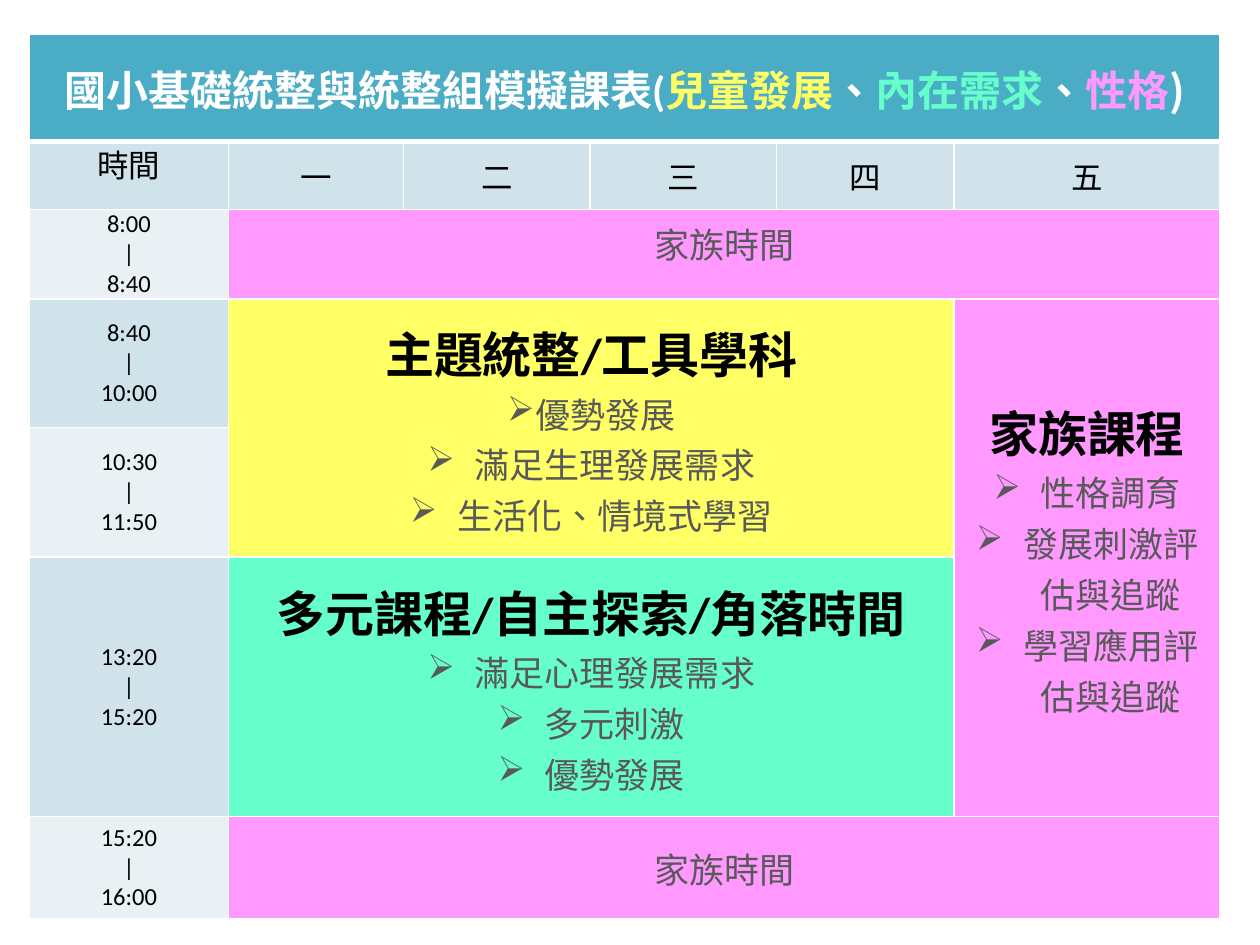
import pptx
import pptx.dml.color
import pptx.enum.text
import pptx.oxml
import pptx.oxml.ns
import pptx.util

Pt = pptx.util.Pt
RGBColor = pptx.dml.color.RGBColor
PP_ALIGN = pptx.enum.text.PP_ALIGN
MSO_ANCHOR = pptx.enum.text.MSO_ANCHOR
qn = pptx.oxml.ns.qn

WHITE = RGBColor(0xFF, 0xFF, 0xFF)
BLACK = RGBColor(0, 0, 0)
GREY = RGBColor(0x59, 0x59, 0x59)
TEAL = RGBColor(0x4B, 0xAC, 0xC6)
BAND_DARK = RGBColor(0xD0, 0xE3, 0xEA)
BAND_LIGHT = RGBColor(0xE9, 0xF1, 0xF5)
YELLOW = RGBColor(0xFF, 0xFF, 0x66)
GREEN = RGBColor(0x66, 0xFF, 0xCC)
PINK = RGBColor(0xFF, 0x99, 0xFF)

LATIN, CJK = "Calibri", "Noto Sans CJK SC"
COLS = [113.8, 100.1, 106.5, 106.5, 101.5, 152]
ROWS = [61.2, 38.9, 49.7, 73.4, 74.2, 148.3, 57.6]


def xml(tag, parent, **attrs):
    el = pptx.oxml.parse_xml(f'<a:{tag} {pptx.oxml.ns.nsdecls("a")}/>')
    for name, value in attrs.items():
        el.set(name, str(value))
    parent.append(el)
    return el


def add_run(p, text, size=18, color=BLACK, bold=False, font=LATIN):
    r = p.add_run()
    r.text = text
    r.font.size, r.font.bold, r.font.name = Pt(size), bold, font
    r.font.color.rgb = color
    rPr = r.font._element
    rPr.set("lang", "zh-TW")
    xml("ea", rPr, typeface=CJK)


class Timetable:
    def __init__(self, s):
        self.s = s

    def table(self, left, top, cols, rows):
        shape = self.s.shapes.add_table(len(rows), len(cols), Pt(left), Pt(top),
                                        Pt(sum(cols)), Pt(sum(rows)))
        self.tbl = shape.table
        for col, width in zip(self.tbl.columns, cols):
            col.width = Pt(width)
        for row, height in zip(self.tbl.rows, rows):
            row.height = Pt(height)
        # White grid, heavier below the title row
        for i in range(len(rows)):
            for j in range(len(cols)):
                tcPr = self.tbl.cell(i, j)._tc.get_or_add_tcPr()
                heavy = {0: "lnB", 1: "lnT"}.get(i)
                for side in ("lnL", "lnR", "lnT", "lnB"):
                    ln = xml(side, tcPr, w=int(Pt(3 if side == heavy else 1)))
                    xml("srgbClr", xml("solidFill", ln), val=WHITE)

    def cell(self, row, col, fill, span=(1, 1), anchor=MSO_ANCHOR.MIDDLE, inset=(5.4, 0)):
        c = self.tbl.cell(row, col)
        if span != (1, 1):
            c.merge(self.tbl.cell(row + span[0] - 1, col + span[1] - 1))
        c.fill.solid()
        c.fill.fore_color.rgb = fill
        c.vertical_anchor = anchor
        c.margin_left = c.margin_right = Pt(inset[0])
        c.margin_top = c.margin_bottom = Pt(inset[1])
        return c.text_frame

    def paragraph(self, tf, text="", bullet=False, indent=27, spacing=None, **fmt):
        p = tf.paragraphs[0]
        if p.runs:
            p = tf.add_paragraph()
        p.alignment = PP_ALIGN.CENTER
        if spacing:
            p.line_spacing = Pt(spacing)
        if bullet:
            pPr = p._p.get_or_add_pPr()
            pPr.set("marL", str(int(Pt(indent))))
            pPr.set("indent", str(int(Pt(-indent))))
            xml("buChar", pPr, char="➢")
        if text:
            add_run(p, text, **fmt)
        return p

    def time(self, row, start, end, fill, **layout):
        tf = self.cell(row, 0, fill, **layout)
        for text in (start, "|", end):
            self.paragraph(tf, text, size=14)

    def course(self, row, col, fill, span, title, goals, first_indent=27):
        tf = self.cell(row, col, fill, span)
        self.paragraph(tf, title, size=28, bold=True)
        for k, goal in enumerate(goals):
            self.paragraph(tf, goal, bullet=True, size=20, color=GREY,
                           indent=27 if k else first_indent)

    def family_time(self, row, spacing=None, **layout):
        tf = self.cell(row, 1, PINK, (1, 5), **layout)
        self.paragraph(tf, "家族時間", size=20, color=GREY, spacing=spacing)


def main():
    prs = pptx.Presentation()
    prs.slide_width, prs.slide_height = Pt(720), Pt(540)
    t = Timetable(prs.slides.add_slide(prs.slide_layouts[6]))
    t.table(16.8, 19.6, COLS, ROWS)

    # Title row
    p = t.paragraph(t.cell(0, 0, TEAL, (1, 6)))
    add_run(p, "國小基礎統整與統整組模擬課表(", size=24, color=WHITE, bold=True)
    for text, color in (("兒童發展", YELLOW), ("、", WHITE), ("內在需求", GREEN),
                        ("、", WHITE), ("性格", PINK), (")", WHITE)):
        add_run(p, text, size=24, color=color, bold=True, font=CJK)

    # Weekday row
    for col, text in enumerate(("時間", "一", "二", "三", "四", "五")):
        anchor = MSO_ANCHOR.MIDDLE if col else MSO_ANCHOR.TOP
        t.paragraph(t.cell(1, col, BAND_DARK, anchor=anchor), text)

    # Time column
    t.time(2, "8:00", "8:40", BAND_LIGHT, anchor=MSO_ANCHOR.TOP)
    t.time(3, "8:40", "10:00", BAND_DARK)
    t.time(4, "10:30", "11:50", BAND_LIGHT)
    t.time(5, "13:20", "15:20", BAND_DARK)
    t.time(6, "15:20", "16:00", BAND_LIGHT, anchor=MSO_ANCHOR.TOP, inset=(7.2, 3.6))

    # Courses
    t.family_time(2, spacing=17)
    t.course(3, 1, YELLOW, (2, 4), "主題統整/工具學科",
             ["優勢發展", "滿足生理發展需求", "生活化、情境式學習"], first_indent=0)
    t.course(3, 5, PINK, (3, 1), "家族課程",
             ["性格調育", "發展刺激評估與追蹤", "學習應用評估與追蹤"])
    t.course(5, 1, GREEN, (1, 4), "多元課程/自主探索/角落時間",
             ["滿足心理發展需求", "多元刺激", "優勢發展"])
    t.family_time(6, inset=(7.2, 3.6))

    prs.save("out.pptx")


if __name__ == "__main__":
    main()
